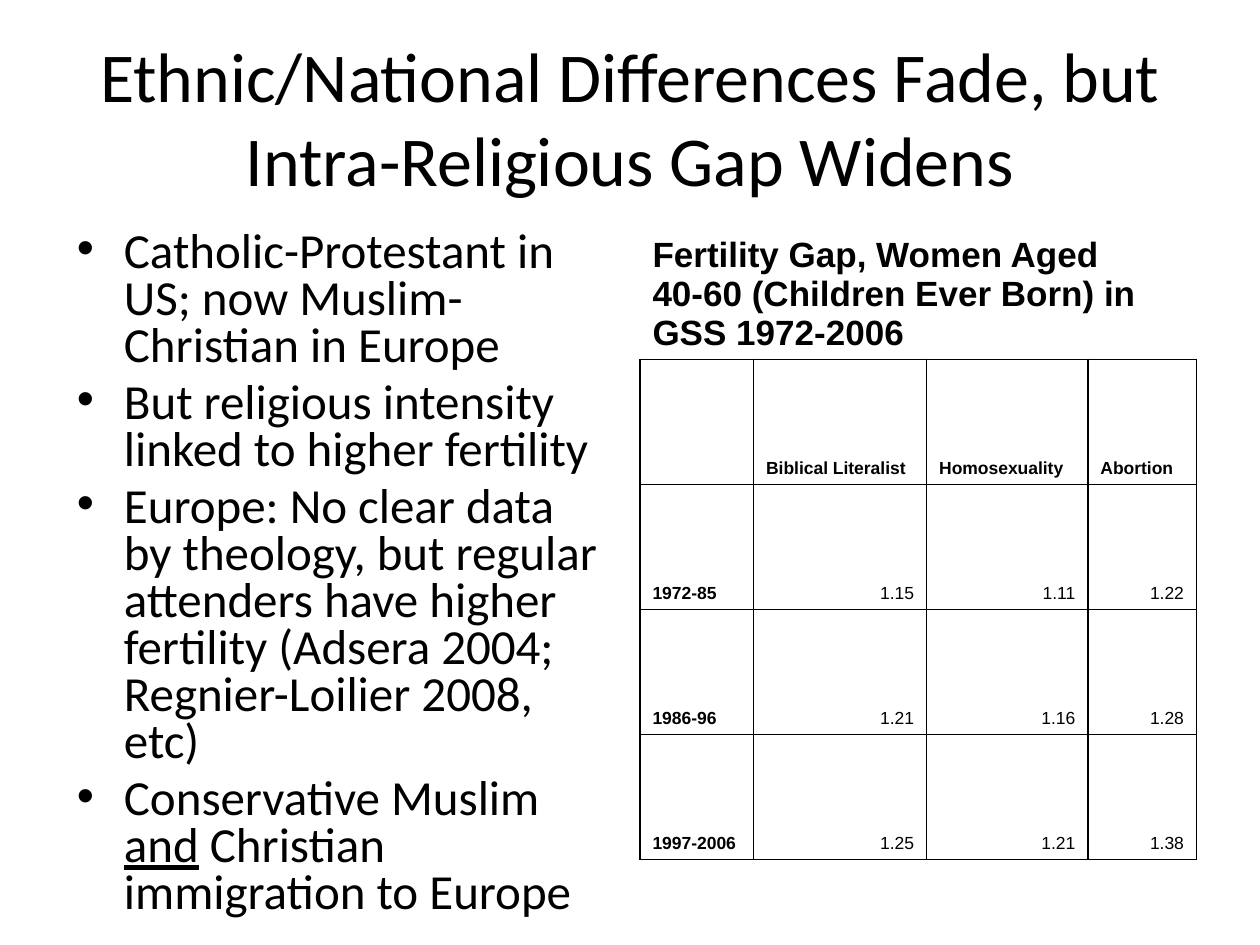
from lxml import etree
from pptx import Presentation
from pptx.dml.color import RGBColor
from pptx.enum.text import MSO_ANCHOR, PP_ALIGN
from pptx.oxml.ns import qn
from pptx.util import Cm, Pt

LEFT, CENTER, RIGHT = PP_ALIGN.LEFT, PP_ALIGN.CENTER, PP_ALIGN.RIGHT
TOP, MIDDLE, BOTTOM = MSO_ANCHOR.TOP, MSO_ANCHOR.MIDDLE, MSO_ANCHOR.BOTTOM
BLACK = "000000"

TITLE = "Ethnic/National Differences Fade, but Intra-Religious Gap Widens"
BULLETS = [
    [("Catholic-Protestant in US; now Muslim-Christian in Europe", False)],
    [("But religious intensity linked to higher fertility", False)],
    [("Europe: No clear data by theology, but regular attenders have higher "
      "fertility (Adsera 2004; Regnier-Loilier 2008, etc)", False)],
    [("Conservative Muslim ", False), ("and", True),
     (" Christian immigration to Europe", False)],
]
CAPTION = ["Fertility Gap, Women Aged",
           "40-60 (Children Ever Born) in GSS 1972-2006"]
ROWS = [
    ["", "Biblical Literalist", "Homosexuality", "Abortion"],
    ["1972-85", "1.15", "1.11", "1.22"],
    ["1986-96", "1.21", "1.16", "1.28"],
    ["1997-2006", "1.25", "1.21", "1.38"],
]
COL_WIDTHS = [2.29, 3.49, 3.25, 2.19]
CAPTION_HEIGHT, ROW_HEIGHT = 2.5, 2.52


def rgb(value):
    return RGBColor.from_string(value)


def add_run(p, text, size, font, bold=False, underline=False):
    r = p.add_run()
    r.text = text
    r.font.size = Pt(size)
    r.font.name = font
    r.font.bold = bold
    r.font.underline = underline
    r.font.color.rgb = rgb(BLACK)


def paragraphs(tf, count):
    return [tf.paragraphs[0]] + [tf.add_paragraph() for _ in range(count - 1)]


def add_box(s, x, y, w, h, anchor):
    tf = s.shapes.add_textbox(Cm(x), Cm(y), Cm(w), Cm(h)).text_frame
    tf.word_wrap = True
    tf.vertical_anchor = anchor
    return tf


def add_bullet(p):
    pPr = p._p.get_or_add_pPr()
    pPr.set("marL", str(Cm(0.95)))
    pPr.set("indent", str(-Cm(0.95)))
    etree.SubElement(pPr, qn("a:buFont")).set("typeface", "Arial")
    etree.SubElement(pPr, qn("a:buChar")).set("char", "•")


def set_borders(cell, drawn):
    tcPr = cell._tc.get_or_add_tcPr()
    for i, side in enumerate("LRTB"):
        ln = etree.Element(qn(f"a:ln{side}"), w=str(Pt(1)))
        if side in drawn:
            fill = etree.SubElement(ln, qn("a:solidFill"))
            etree.SubElement(fill, qn("a:srgbClr")).set("val", BLACK)
        else:
            etree.SubElement(ln, qn("a:noFill"))
        tcPr.insert(i, ln)


def add_title(s):
    tf = add_box(s, 1.27, 0.76, 22.86, 3.18, MIDDLE)
    p = tf.paragraphs[0]
    p.alignment = CENTER
    add_run(p, TITLE, 40, "Calibri")


def add_bullets(s):
    tf = add_box(s, 1.3, 4.52, 11.23, 13.56, TOP)
    for p, runs in zip(paragraphs(tf, len(BULLETS)), BULLETS):
        p.line_spacing = 0.8
        p.space_before = Pt(5.6)
        add_bullet(p)
        for text, underline in runs:
            add_run(p, text, 28, "Calibri", underline=underline)


def add_fertility_table(s):
    height = CAPTION_HEIGHT + ROW_HEIGHT * len(ROWS)
    table = s.shapes.add_table(len(ROWS) + 1, len(COL_WIDTHS), Cm(12.9), Cm(4.45),
                               Cm(sum(COL_WIDTHS)), Cm(height)).table
    table.first_row = table.horz_banding = False
    for col, width in zip(table.columns, COL_WIDTHS):
        col.width = Cm(width)
    for i, row in enumerate(table.rows):
        row.height = Cm(ROW_HEIGHT if i else CAPTION_HEIGHT)
        for cell in row.cells:
            cell.fill.background()
            cell.vertical_anchor = BOTTOM
            set_borders(cell, "LRTB" if i else "B")

    caption = table.cell(0, 0)
    caption.merge(table.cell(0, len(COL_WIDTHS) - 1))
    for p, text in zip(paragraphs(caption.text_frame, len(CAPTION)), CAPTION):
        add_run(p, text, 20, "Arial", bold=True)

    for i, values in enumerate(ROWS):
        for j, text in enumerate(values):
            if not text:
                continue
            heading = i == 0 or j == 0
            p = table.cell(i + 1, j).text_frame.paragraphs[0]
            p.alignment = LEFT if heading else RIGHT
            add_run(p, text, 10, "Arial", bold=heading)


def main():
    prs = Presentation()
    prs.slide_width, prs.slide_height = Cm(25.4), Cm(19.05)
    s = prs.slides.add_slide(prs.slide_layouts[6])
    add_title(s)
    add_bullets(s)
    add_fertility_table(s)
    prs.save("out.pptx")


if __name__ == "__main__":
    main()
